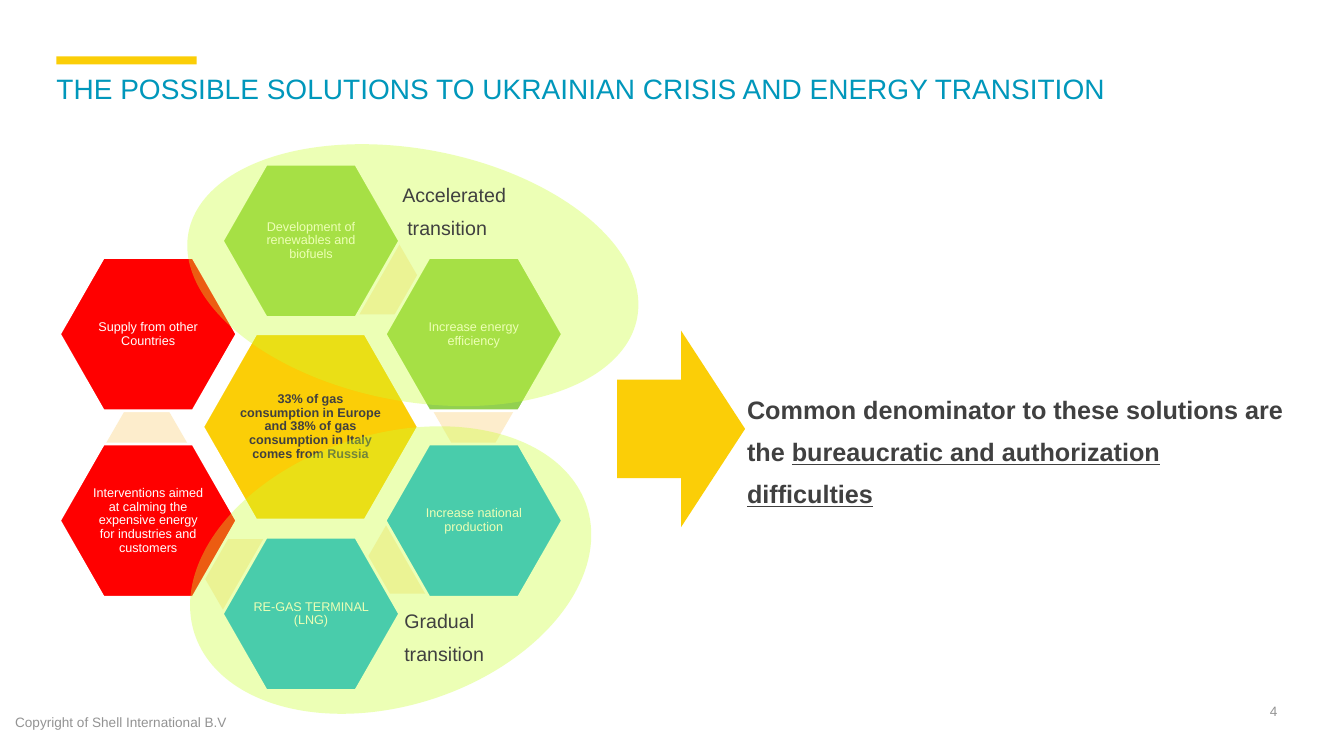
from lxml import etree
from pptx import Presentation
from pptx.dml.color import RGBColor
from pptx.enum import shapes, text
from pptx.oxml.ns import qn
from pptx.util import Inches, Pt

TITLE = "THE POSSIBLE SOLUTIONS TO UKRAINIAN CRISIS AND ENERGY TRANSITION"
YELLOW, GREEN, BLUE, RED = "FBCE07", "92D050", "00B0F0", "FF0000"
WHITE, DARK, GREY, CREAM, LIME = "FFFFFF", "404040", "939393", "FDEDCC", "CCFF33"

CORE = "33% of gas consumption in Europe and 38% of gas consumption in Italy comes from Russia"
# Text, fill, column, row, left and top of the connecting accent
SOLUTIONS = [
    ("Development of renewables and biofuels", GREEN, 1, 0, (3.35, 2.42)),
    ("Increase energy efficiency", GREEN, 2, 1, (4.29, 3.72)),
    ("Increase national production", BLUE, 2, 3, (3.64, 5.19)),
    ("RE-GAS TERMINAL (LNG)", BLUE, 1, 4, (2.01, 5.35)),
    ("Interventions aimed at calming the expensive energy for industries and customers",
     RED, 0, 3, (1.05, 4.05)),
    ("Supply from other Countries", RED, 0, 1, None),
]
HEX_LEFT, HEX_TOP, HEX_WIDTH, HEX_HEIGHT = 0.59, 1.63, 1.76, 1.52
COLUMN_STEP, ROW_STEP = 1.615, 0.925
# Box and rotation
GROUP_OVALS = [((1.83, 1.48, 4.53, 2.5), 10.8), ((1.83, 4.31, 4.09, 2.69), 162.1)]
OVAL_OPACITY = 36
# Box, paragraphs as (runs, left indent), size, colour, bold, line spacing, alignment
# Each run is (text, underline)
LEFT, RIGHT = text.PP_ALIGN.LEFT, text.PP_ALIGN.RIGHT
TEXTS = [
    ((0.15, 7.08, 3.07, 0.38), [([("Copyright of Shell International B.V", False)], 0)],
     9.7, GREY, False, 1, LEFT),
    ((9.6, 6.97, 3.07, 0.38), [([("4", False)], 0)], 9.7, GREY, False, 1, RIGHT),
    ((3.99, 1.72, 1.76, 0.62),
     [([("Accelerated", False)], 0), ([("transition", False)], 0.05)],
     14, DARK, False, 1.4, LEFT),
    ((4.01, 5.95, 1.05, 0.62), [([("Gradual transition", False)], 0)],
     14, DARK, False, 1.4, LEFT),
    ((7.41, 3.79, 5.36, 0.8),
     [([("Common denominator to these solutions are the ", False),
        ("bureaucratic and authorization difficulties", True)], 0)],
     18, DARK, True, 1.4, LEFT),
]


def rgb(value):
    return RGBColor.from_string(value)


def set_frame(frame, inset, anchor):
    frame.word_wrap = True
    frame.auto_size = text.MSO_AUTO_SIZE.NONE
    frame.vertical_anchor = anchor
    frame.margin_left = frame.margin_right = Inches(inset)
    frame.margin_top = frame.margin_bottom = Inches(inset)


def add_run(paragraph, words, size, colour, bold=False, underline=False):
    run = paragraph.add_run()
    run.text = words
    font = run.font
    font.name, font.size, font.bold = "Arial", Pt(size), bold
    font.color.rgb = rgb(colour)
    if underline:
        font.underline = True


def add_shape(slide, kind, box, fill, outline=None):
    shape = slide.shapes.add_shape(kind, *map(Inches, box))
    shape.shadow.inherit = False
    shape.fill.solid()
    shape.fill.fore_color.rgb = rgb(fill)
    if outline:
        shape.line.color.rgb = rgb(outline)
        shape.line.width = Pt(2)
    else:
        shape.line.fill.background()
    return shape


def add_hexagon(slide, box, fill, words, colour, bold=False):
    shape = add_shape(slide, shapes.MSO_SHAPE.HEXAGON, box, fill, WHITE)
    shape.adjustments[0] = 0.286
    set_frame(shape.text_frame, 0.01, text.MSO_ANCHOR.MIDDLE)
    paragraph = shape.text_frame.paragraphs[0]
    paragraph.alignment = text.PP_ALIGN.CENTER
    paragraph.line_spacing = 0.9
    add_run(paragraph, words, 9, colour, bold)


def add_text(slide, box, paragraphs, size, colour, bold, spacing, alignment):
    frame = slide.shapes.add_textbox(*map(Inches, box)).text_frame
    set_frame(frame, 0, text.MSO_ANCHOR.TOP)
    for index, (runs, indent) in enumerate(paragraphs):
        paragraph = frame.add_paragraph() if index else frame.paragraphs[0]
        paragraph.alignment = alignment
        paragraph.line_spacing = spacing
        if indent:
            paragraph._p.get_or_add_pPr().set("marL", str(Inches(indent)))
        for words, underline in runs:
            add_run(paragraph, words, size, colour, bold, underline)


def main():
    presentation = Presentation()
    presentation.slide_width, presentation.slide_height = Inches(13.33), Inches(7.5)
    slide = presentation.slides.add_slide(presentation.slide_layouts[5])

    add_shape(slide, shapes.MSO_SHAPE.RECTANGLE, (0.56, 0.56, 1.39, 0.08), YELLOW)
    title = slide.shapes.title
    title.left, title.top, title.width, title.height = map(Inches, (0.56, 0.71, 12.22, 0.82))
    set_frame(title.text_frame, 0, text.MSO_ANCHOR.TOP)
    title.text_frame.paragraphs[0].alignment = LEFT
    add_run(title.text_frame.paragraphs[0], TITLE, 20, "0097BB")

    add_hexagon(slide, (2.01, 3.31, 2.14, 1.85), YELLOW, CORE, DARK, bold=True)
    for words, fill, column, row, accent in SOLUTIONS:
        if accent:
            hexagon = add_shape(slide, shapes.MSO_SHAPE.HEXAGON, (*accent, 0.81, 0.7), CREAM)
            hexagon.adjustments[0] = 0.289
        box = (HEX_LEFT + column * COLUMN_STEP, HEX_TOP + row * ROW_STEP,
               HEX_WIDTH, HEX_HEIGHT)
        add_hexagon(slide, box, fill, words, WHITE)

    for box, rotation in GROUP_OVALS:
        oval = add_shape(slide, shapes.MSO_SHAPE.OVAL, box, LIME)
        oval.rotation = rotation
        colour = oval._element.spPr.find(qn("a:solidFill"))[0]
        etree.SubElement(colour, qn("a:alpha")).set("val", str(OVAL_OPACITY * 1000))

    add_shape(slide, shapes.MSO_SHAPE.RIGHT_ARROW, (6.12, 3.28, 1.27, 1.95), YELLOW)
    for item in TEXTS:
        add_text(slide, *item)

    presentation.save("out.pptx")


if __name__ == "__main__":
    main()
